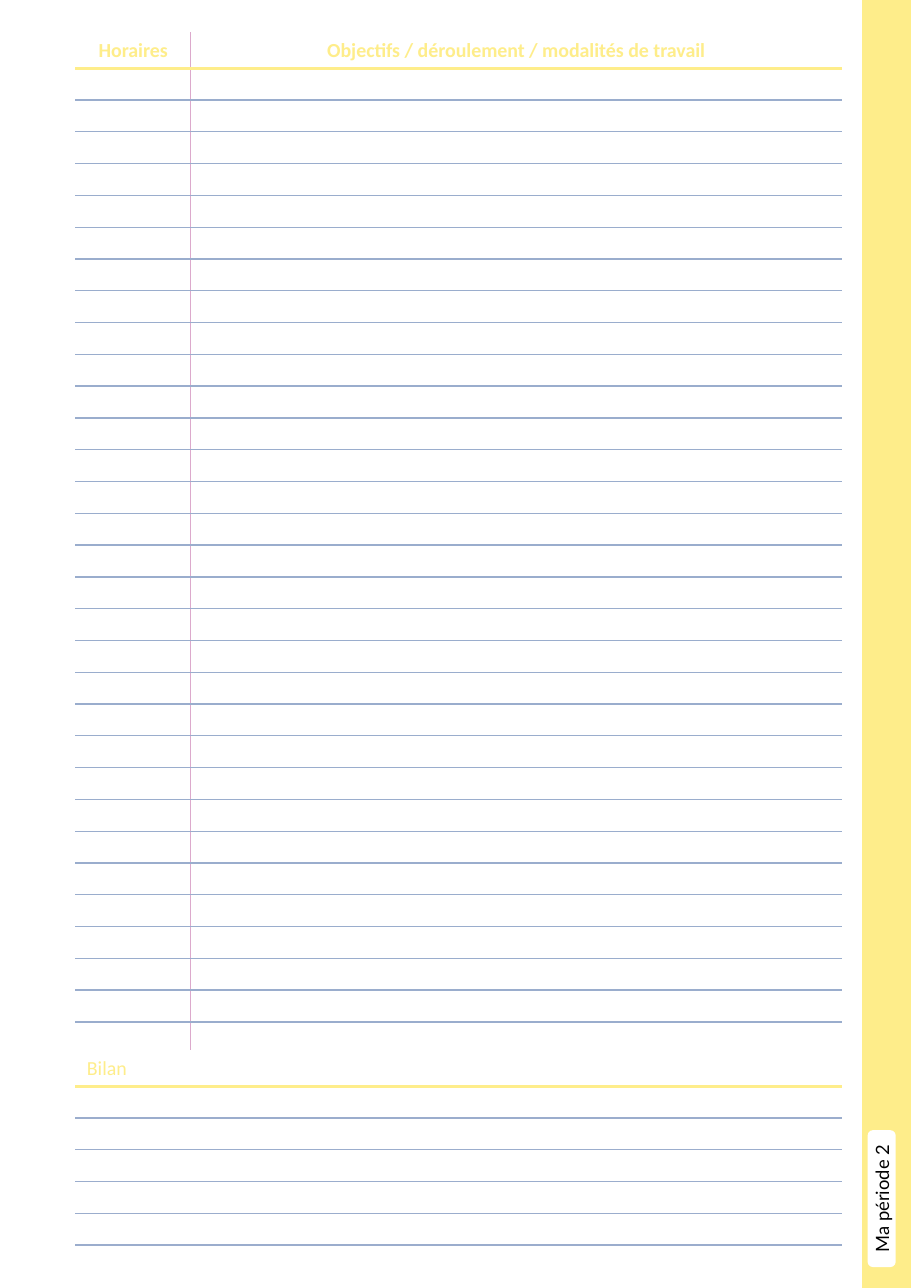
from lxml import etree
from pptx import Presentation
from pptx import util as u
from pptx.dml import color
from pptx.enum import shapes, text
from pptx.oxml import ns

COLORS = {
    "white": "FFFFFF",
    "black": "000000",
    "yellow": "FEED8A",
    "blue": "9AADCD",
    "slate": "9BADCD",
    "pink": "DCA9CC",
}
TABLE_LEFT = u.Cm(1.75)
HEADER_HEIGHT = u.Cm(0.81)
LINE_HEIGHT = u.Cm(22.75) // 31


def rgb(name):
    return color.RGBColor.from_string(COLORS[name])


def write_text(frame, content, font="Calibri", size=13, fill="yellow",
               bold=False, align=text.PP_ALIGN.LEFT):
    paragraph = frame.paragraphs[0]
    paragraph.alignment = align
    run = paragraph.add_run()
    run.text = content
    run.font.name = font
    run.font.size = u.Pt(size)
    run.font.bold = bold
    run.font.color.rgb = rgb(fill)


def add_block(slide, kind, left, top, width, height, fill):
    shape = slide.shapes.add_shape(
        kind, u.Cm(left), u.Cm(top), u.Cm(width), u.Cm(height))
    shape.shadow.inherit = False
    shape.fill.solid()
    shape.fill.fore_color.rgb = rgb(fill)
    shape.line.color.rgb = rgb(fill)
    shape.line.width = u.Pt(1)
    return shape


def add_period_tab(slide, label):
    shape = add_block(slide, shapes.MSO_SHAPE.ROUNDED_RECTANGLE,
                      20.02, 26.08, 0.61, 3.12, "white")
    frame = shape.text_frame
    frame.word_wrap = False
    frame.vertical_anchor = text.MSO_ANCHOR.MIDDLE
    frame.margin_left = frame.margin_right = 0
    frame.margin_top = frame.margin_bottom = 0
    shape.element.txBody.find(ns.qn("a:bodyPr")).set("vert", "vert270")
    write_text(frame, label, font="Lato", size=12, fill="black",
               align=text.PP_ALIGN.CENTER)


def set_borders(cell, borders):
    properties = cell._tc.get_or_add_tcPr()
    for side in "LRTB":
        name, width = borders[side]
        line = etree.SubElement(properties, ns.qn(f"a:ln{side}"),
                                w=str(u.Pt(width)))
        solid = etree.SubElement(line, ns.qn("a:solidFill"))
        etree.SubElement(solid, ns.qn("a:srgbClr"), val=COLORS[name])


def format_cell(cell, borders):
    set_borders(cell, borders)
    cell.fill.solid()
    cell.fill.fore_color.rgb = rgb("white")


def shrink_empty_line(cell):
    paragraph = cell.text_frame.paragraphs[0]
    etree.SubElement(paragraph._p, ns.qn("a:endParaRPr"), sz="1000")


def add_ruled_table(slide, top, widths, headings, line_count, rule,
                    separator="white", merge_lines=False, **heading_format):
    columns = [u.Cm(width) for width in widths]
    frame = slide.shapes.add_table(
        line_count + 1, len(columns), TABLE_LEFT, u.Cm(top), sum(columns),
        HEADER_HEIGHT + line_count * LINE_HEIGHT)
    table = frame.table
    table.first_row = table.horz_banding = False
    for column, width in zip(table.columns, columns):
        column.width = width
    edges = ["white"] + [separator] * (len(columns) - 1) + ["white"]
    rules = [("white", 1), ("yellow", 2.25)] + [(rule, 1)] * line_count
    for i, row in enumerate(table.rows):
        row.height = LINE_HEIGHT if i else HEADER_HEIGHT
        for j, cell in enumerate(row.cells):
            format_cell(cell, {"L": (edges[j], 1), "R": (edges[j + 1], 1),
                               "T": rules[i], "B": rules[i + 1]})
            if i == 0 and headings[j]:
                write_text(cell.text_frame, headings[j], **heading_format)
            else:
                shrink_empty_line(cell)
        if i and merge_lines:
            table.cell(i, 0).merge(table.cell(i, len(columns) - 1))


def main():
    presentation = Presentation()
    presentation.slide_width = u.Cm(21)
    presentation.slide_height = u.Cm(29.7)
    slide = presentation.slides.add_slide(presentation.slide_layouts[6])

    add_block(slide, shapes.MSO_SHAPE.RECTANGLE, 19.9, 0, 1.1, 29.7, "yellow")
    add_period_tab(slide, "Ma période 2")
    add_ruled_table(
        slide, 0.76, [2.64, 15.01],
        ["Horaires", "Objectifs / déroulement / modalités de travail"],
        31, "blue", separator="pink", bold=True, align=text.PP_ALIGN.CENTER)
    add_ruled_table(slide, 24.23, [8.81, 8.84], ["Bilan", ""], 5, "slate",
                    merge_lines=True)
    presentation.save("out.pptx")


if __name__ == "__main__":
    main()
